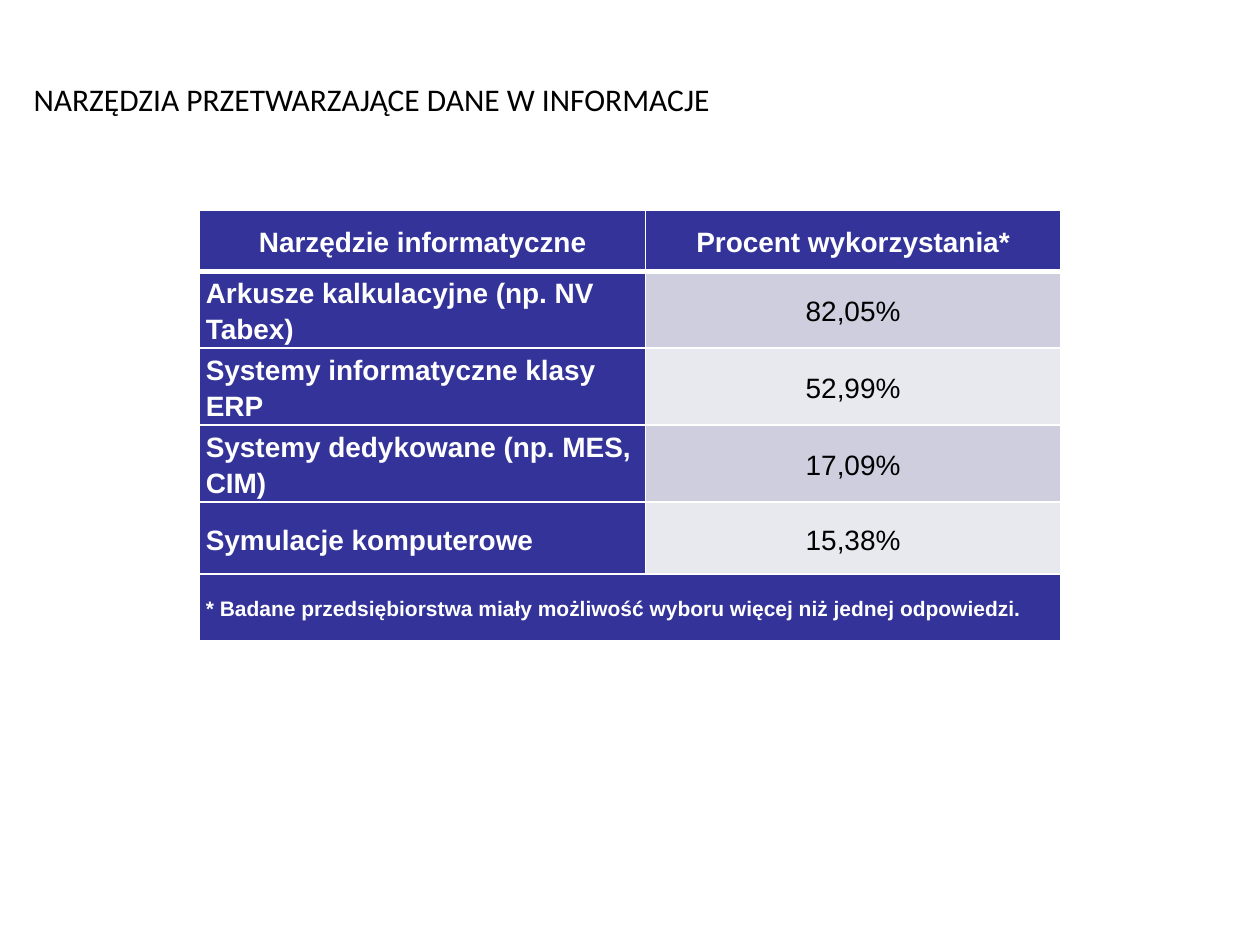
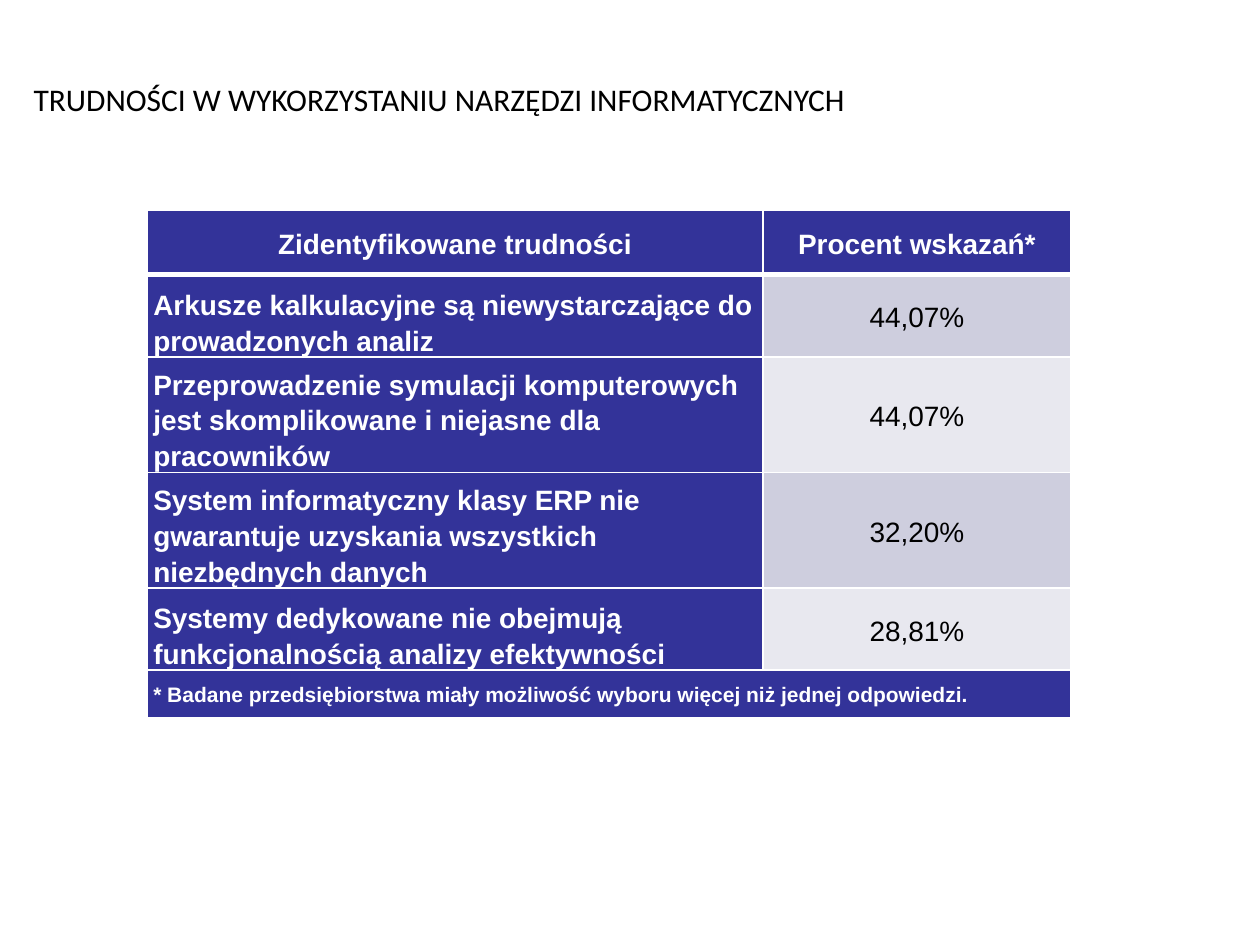
import pptx
import pptx.util
import pptx.dml.color
import pptx.enum.text
import pptx.oxml.ns
import lxml.etree

Pt = pptx.util.Pt
RGB = pptx.dml.color.RGBColor
ALIGN = pptx.enum.text.PP_ALIGN
ANCHOR = pptx.enum.text.MSO_ANCHOR

NAVY = RGB(0x33, 0x33, 0x99)
LILAC = RGB(0xCE, 0xCE, 0xDE)
PALE = RGB(0xE8, 0xE8, 0xEF)
WHITE = RGB(0xFF, 0xFF, 0xFF)
BLACK = RGB(0, 0, 0)
TITLE_BOX = (12, 42, 708, 29)
NOTE = "* Badane przedsiębiorstwa miały możliwość wyboru więcej niż jednej odpowiedzi."

TOOLS = [
    ("Narzędzie informatyczne", "Procent wykorzystania*"),
    ("Arkusze kalkulacyjne (np. NV Tabex)", "82,05%"),
    ("Systemy informatyczne klasy ERP", "52,99%"),
    ("Systemy dedykowane (np. MES, CIM)", "17,09%"),
    ("Symulacje komputerowe", "15,38%"),
]
ISSUES = [
    ("Zidentyfikowane trudności", "Procent wskazań*"),
    ("Arkusze kalkulacyjne są niewystarczające do prowadzonych analiz", "44,07%"),
    ("Przeprowadzenie symulacji komputerowych jest skomplikowane i niejasne dla pracowników", "44,07%"),
    ("System informatyczny klasy ERP nie gwarantuje uzyskania wszystkich niezbędnych danych", "32,20%"),
    ("Systemy dedykowane nie obejmują funkcjonalnością analizy efektywności", "28,81%"),
]


def add_run(para, text, font, size, color, bold=False):
    run = para.add_run()
    run.text = text
    run.font.name = font
    run.font.size = Pt(size)
    run.font.bold = bold
    run.font.color.rgb = color


def add_title(slide, text, box):
    title = slide.shapes.title
    title.left, title.top, title.width, title.height = map(Pt, box)
    frame = title.text_frame
    frame.word_wrap = True
    frame.auto_size = pptx.enum.text.MSO_AUTO_SIZE.NONE
    frame.vertical_anchor = ANCHOR.TOP
    para = frame.paragraphs[0]
    para.alignment = ALIGN.LEFT
    add_run(para, text, "Calibri", 18, BLACK)


def add_edges(cell, top, base):
    props = cell._tc.get_or_add_tcPr()
    for side, width in (("L", 1), ("R", 1), ("T", top), ("B", base)):
        line = lxml.etree.SubElement(props, pptx.oxml.ns.qn("a:ln" + side), w=str(Pt(width)))
        fill = lxml.etree.SubElement(line, pptx.oxml.ns.qn("a:solidFill"))
        lxml.etree.SubElement(fill, pptx.oxml.ns.qn("a:srgbClr"), val=str(WHITE))


def fill_cell(cell, text, fill, color=WHITE, size=16, bold=True,
              align=ALIGN.LEFT, anchor=ANCHOR.MIDDLE):
    cell.margin_left = cell.margin_right = Pt(3.6)
    cell.margin_top = cell.margin_bottom = 0
    cell.vertical_anchor = anchor
    cell.fill.solid()
    cell.fill.fore_color.rgb = fill
    para = cell.text_frame.paragraphs[0]
    para.alignment = align
    para.line_spacing = 1.15
    add_run(para, text, "Arial", size, color, bold)


def add_grid(slide, data, spot, widths, heights, anchor):
    left, top = spot
    last = len(data)
    table = slide.shapes.add_table(
        last + 1, 2, Pt(left), Pt(top), Pt(sum(widths)), Pt(sum(heights))).table
    for col, width in zip(table.columns, widths):
        col.width = Pt(width)
    for index, (row, height) in enumerate(zip(table.rows, heights)):
        row.height = Pt(height)
        for cell in row.cells:
            add_edges(cell, 3 if index == 1 else 1, 3 if index == 0 else 1)
    for index, (label, value) in enumerate(data):
        name, share = table.cell(index, 0), table.cell(index, 1)
        if index == 0:
            fill_cell(name, label, NAVY, align=ALIGN.CENTER)
            fill_cell(share, value, NAVY, align=ALIGN.CENTER)
        else:
            fill_cell(name, label, NAVY, anchor=anchor)
            fill_cell(share, value, LILAC if index % 2 else PALE,
                      BLACK, bold=False, align=ALIGN.CENTER)
    foot = table.cell(last, 0)
    foot.merge(table.cell(last, 1))
    fill_cell(foot, NOTE, NAVY, size=12)


def add_page(deck, title, data, spot, widths, heights, anchor):
    slide = deck.slides.add_slide(deck.slide_layouts[5])
    add_title(slide, title, TITLE_BOX)
    add_grid(slide, data, spot, widths, heights, anchor)


def main():
    deck = pptx.Presentation()
    deck.slide_width, deck.slide_height = Pt(720), Pt(540)
    add_page(deck, "NARZĘDZIA PRZETWARZAJĄCE DANE W INFORMACJE", TOOLS,
             (114, 120), (255, 237), (35, 44, 44, 44, 41, 38), ANCHOR.MIDDLE)
    add_page(deck, "TRUDNOŚCI W WYKORZYSTANIU NARZĘDZI INFORMATYCZNYCH", ISSUES,
             (84, 120), (352, 176), (37, 47, 66, 66, 47, 27), ANCHOR.BOTTOM)
    deck.save("out.pptx")


if __name__ == "__main__":
    main()
